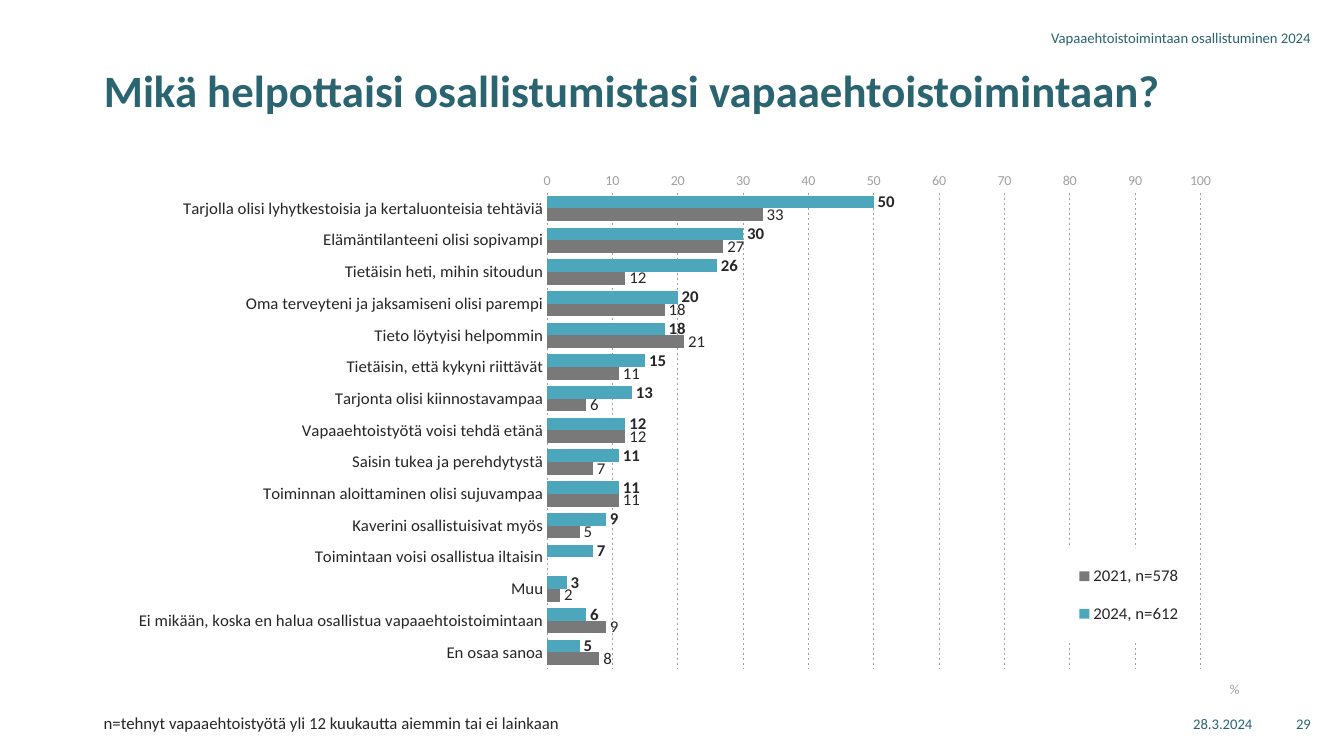
import pptx
import pptx.chart.data
import pptx.dml.color
import pptx.enum.chart
import pptx.enum.dml
import pptx.enum.text
import pptx.oxml
import pptx.oxml.ns
import pptx.util

Inches = pptx.util.Inches
Pt = pptx.util.Pt
RGBColor = pptx.dml.color.RGBColor
Align = pptx.enum.text.PP_ALIGN
Anchor = pptx.enum.text.MSO_ANCHOR
Tick = pptx.enum.chart.XL_TICK_MARK
qn = pptx.oxml.ns.qn

TEAL = RGBColor(0x2A, 0x64, 0x71)
BLUE = RGBColor(0x4D, 0xA7, 0xBC)
GRAY = RGBColor(0x79, 0x79, 0x79)
PALE = RGBColor(0xA0, 0xA0, 0xA0)
INK = RGBColor(0x26, 0x26, 0x26)

SMALL = {"name": "Calibri", "size": Pt(10.5), "color": TEAL}
PLAIN = {"name": "Calibri", "size": Pt(12), "color": INK, "bold": False}
STRONG = {**PLAIN, "bold": True}
FAINT = {**PLAIN, "size": Pt(10), "color": PALE}
HEAD = {"name": "Calibri", "size": Pt(32), "color": TEAL, "bold": True}

ROWS = [
    ("Tarjolla olisi lyhytkestoisia ja kertaluonteisia tehtäviä", 50, 33),
    ("Elämäntilanteeni olisi sopivampi", 30, 27),
    ("Tietäisin heti, mihin sitoudun", 26, 12),
    ("Oma terveyteni ja jaksamiseni olisi parempi", 20, 18),
    ("Tieto löytyisi helpommin", 18, 21),
    ("Tietäisin, että kykyni riittävät", 15, 11),
    ("Tarjonta olisi kiinnostavampaa", 13, 6),
    ("Vapaaehtoistyötä voisi tehdä etänä", 12, 12),
    ("Saisin tukea ja perehdytystä", 11, 7),
    ("Toiminnan aloittaminen olisi sujuvampaa", 11, 11),
    ("Kaverini osallistuisivat myös", 9, 5),
    ("Toimintaan voisi osallistua iltaisin", 7, None),
    ("Muu", 3, 2),
    ("Ei mikään, koska en halua osallistua vapaaehtoistoimintaan", 6, 9),
    ("En osaa sanoa", 5, 8),
]
YEARS = [("2024, n=612", BLUE, STRONG), ("2021, n=578", GRAY, PLAIN)]


def style(font, look):
    for key, value in look.items():
        if key == "color":
            font.color.rgb = value
        else:
            setattr(font, key, value)


def add_title(slide, box, text):
    title = slide.shapes.title
    title.left, title.top, title.width, title.height = map(Inches, box)
    frame = title.text_frame
    frame.text = text
    frame.vertical_anchor = Anchor.TOP
    frame.auto_size = pptx.enum.text.MSO_AUTO_SIZE.NONE
    para = frame.paragraphs[0]
    para.alignment = Align.LEFT
    para.line_spacing = Pt(35)
    style(para.font, HEAD)


def add_text(slide, box, text, look, align, anchor):
    frame = slide.shapes.add_textbox(*map(Inches, box)).text_frame
    frame.word_wrap = True
    frame.vertical_anchor = anchor
    para = frame.paragraphs[0]
    para.text = text
    para.alignment = align
    style(para.font, look)
    return para


def lay_out(part, inner=False, **spots):
    """Fix a chart part at fractions of the chart's size."""
    for old in part.findall(qn("c:layout")):
        part.remove(old)
    target = '<c:layoutTarget val="inner"/>' if inner else ""
    modes = "".join(f'<c:{key}Mode val="edge"/>' for key in "xy")
    sizes = "".join(f'<c:{key} val="{val}"/>' for key, val in spots.items())
    layout = pptx.oxml.parse_xml(
        f'<c:layout {pptx.oxml.ns.nsdecls("c")}><c:manualLayout>'
        f"{target}{modes}{sizes}</c:manualLayout></c:layout>")
    overlay = part.find(qn("c:overlay"))
    if overlay is None:
        part.insert(0, layout)
    else:
        overlay.addprevious(layout)


def format_axes(chart):
    names, scale = chart.category_axis, chart.value_axis
    for axis, look in ((names, PLAIN), (scale, FAINT)):
        axis.major_tick_mark = axis.minor_tick_mark = Tick.NONE
        axis.format.line.fill.background()
        style(axis.tick_labels.font, look)
    names.reverse_order = True
    names.has_major_gridlines = False
    names.crosses = pptx.enum.chart.XL_AXIS_CROSSES.MAXIMUM
    scale.minimum_scale, scale.maximum_scale, scale.major_unit = 0, 100, 10
    scale.has_major_gridlines = True
    line = scale.major_gridlines.format.line
    line.color.rgb = PALE
    line.width = Pt(0.5)
    line.dash_style = pptx.enum.dml.MSO_LINE.DASH
    title = scale.axis_title
    title.text_frame.text = "%"
    style(title.text_frame.paragraphs[0].runs[0].font, FAINT)
    lay_out(title._element, x=0.98, y=0.95)


def add_legend(chart):
    chart.has_legend = True
    legend = chart.legend
    legend.position = pptx.enum.chart.XL_LEGEND_POSITION.RIGHT
    legend.include_in_layout = False
    style(legend.font, PLAIN)
    lay_out(legend._element, x=0.84, y=0.7, w=0.11, h=0.18)
    legend._element.find(qn("c:overlay")).addnext(pptx.oxml.parse_xml(
        f'<c:spPr {pptx.oxml.ns.nsdecls("c", "a")}><a:solidFill>'
        '<a:srgbClr val="FFFFFF"/></a:solidFill></c:spPr>'))


def add_bars(slide, box):
    names, *columns = zip(*ROWS)
    data = pptx.chart.data.CategoryChartData()
    data.categories = names
    for (year, _, _), values in zip(YEARS, columns):
        data.add_series(year, values)
    chart = slide.shapes.add_chart(
        pptx.enum.chart.XL_CHART_TYPE.BAR_CLUSTERED, *map(Inches, box), data).chart
    chart.has_title = False
    style(chart.font, PLAIN)
    plot = chart.plots[0]
    plot.vary_by_categories = False
    plot.gap_width, plot.overlap = 50, 0
    for series, (_, color, look) in zip(plot.series, YEARS):
        series.format.fill.solid()
        series.format.fill.fore_color.rgb = color
        labels = series.data_labels
        labels.show_value = True
        labels.number_format = "#,##0"
        labels.number_format_is_linked = False
        labels.position = pptx.enum.chart.XL_LABEL_POSITION.OUTSIDE_END
        style(labels.font, look)
    format_axes(chart)
    add_legend(chart)
    area = chart._chartSpace.find(".//" + qn("c:plotArea"))
    lay_out(area, inner=True, x=0.392, y=0.012, w=0.565, h=0.92)


def main():
    deck = pptx.Presentation()
    deck.slide_width, deck.slide_height = Inches(13.33), Inches(7.5)
    slide = deck.slides.add_slide(deck.slide_layouts[5])
    add_title(slide, (0.93, 0.62, 11.47, 1.05),
              "Mikä helpottaisi osallistumistasi vapaaehtoistoimintaan?")
    for box, text in (
        ((8.6, 0.17, 4.5, 0.4), "Vapaaehtoistoimintaan osallistuminen 2024"),
        ((9.52, 6.98, 3, 0.4), "28.3.2024"),
        ((12.5, 6.98, 0.6, 0.4), "29"),
    ):
        add_text(slide, box, text, SMALL, Align.RIGHT, Anchor.MIDDLE)
    note = add_text(slide, (0.93, 7.04, 9.18, 0.28),
                    "n=tehnyt vapaaehtoistyötä yli 12 kuukautta aiemmin tai ei lainkaan",
                    PLAIN, Align.LEFT, Anchor.TOP)
    note.line_spacing = 0.9
    add_bars(slide, (0.93, 1.72, 11.47, 5.26))
    deck.save("out.pptx")


if __name__ == "__main__":
    main()
